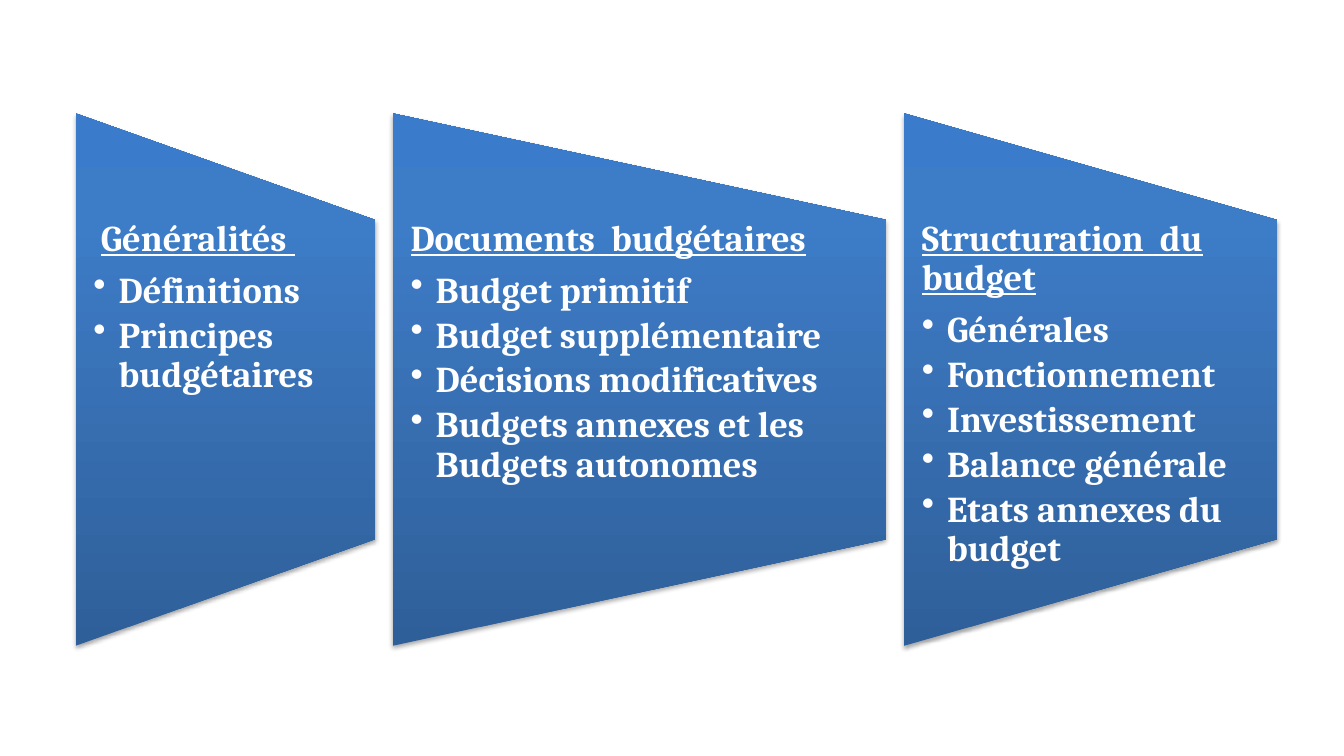
from lxml import etree
from pptx import Presentation
from pptx.dml.color import RGBColor
from pptx.enum.shapes import MSO_SHAPE
from pptx.enum.text import MSO_ANCHOR
from pptx.oxml import parse_xml
from pptx.oxml.ns import nsdecls, qn
from pptx.util import Emu, Pt

PX = 9525
TRAPEZOID = MSO_SHAPE.FLOWCHART_MANUAL_OPERATION
TOP = MSO_ANCHOR.TOP
COLORS = {"dark": "2F5F99", "mid": "3D7CC7", "light": "3A7CCB",
          "text": "FFFFFF", "shadow": "000000"}
STOPS = ((0, "dark"), (80, "mid"), (100, "light"))
LEFT, PANEL_TOP, PANEL_HEIGHT, GAP = 72, 108, 507, 17
PANELS = (
    (285, "Généralités ", 7, ("Définitions", "Principes budgétaires")),
    (470, "Documents  budgétaires", 0,
     ("Budget primitif", "Budget supplémentaire", "Décisions modificatives",
      "Budgets annexes et les Budgets autonomes")),
    (355, "Structuration  du budget", 0,
     ("Générales", "Fonctionnement", "Investissement", "Balance générale",
      "Etats annexes du budget")),
)


def px(n):
    """Convert px to EMU."""
    return Emu(round(n * PX))


def style_panel(s):
    """Give a shape the upright gradient and the soft shadow below it."""
    s.line.fill.background()
    s.shadow.inherit = False
    pr = s.element.spPr
    stops = "".join(f'<a:gs pos="{pos * 1000}"><a:srgbClr val="{COLORS[name]}"/></a:gs>'
                    for pos, name in STOPS)
    pr.find(qn("a:prstGeom")).addnext(parse_xml(
        f'<a:gradFill {nsdecls("a")} rotWithShape="0"><a:gsLst>{stops}</a:gsLst>'
        '<a:lin ang="16200000" scaled="0"/></a:gradFill>'))
    pr.find(qn("a:effectLst")).append(parse_xml(
        f'<a:outerShdw {nsdecls("a")} blurRad="40000" dist="23000" dir="5400000" '
        f'rotWithShape="0"><a:srgbClr val="{COLORS["shadow"]}">'
        '<a:alpha val="35000"/></a:srgbClr></a:outerShdw>'))


def add_text(p, text, size=26, underline=False, after=4, margin=0, bullet=False):
    """Fill a paragraph with formatted text, bulleted if asked."""
    p.line_spacing = 0.9
    p.space_after = Pt(after)
    pr = p._p.get_or_add_pPr()
    pr.set("marL", str(px(margin)))
    pr.set("indent", str(px(-margin if bullet else 0)))
    if bullet:
        p.level = 1
        etree.SubElement(pr, qn("a:buChar")).set("char", "•")
    r = p.add_run()
    r.text = text
    r.font.name = "Cambria"
    r.font.size = Pt(size)
    r.font.bold = True
    r.font.underline = underline
    r.font.color.rgb = RGBColor.from_string(COLORS["text"])


def add_panel(slide, x, y, w, h, title, title_margin, items):
    """Draw a sideways trapezoid with a heading and a bulleted list."""
    s = slide.shapes.add_shape(TRAPEZOID, px(x + (w - h) / 2),
                               px(y + (h - w) / 2), px(h), px(w))
    s.rotation = 270
    style_panel(s)
    tf = slide.shapes.add_textbox(px(x), px(y + h / 5), px(w), px(h * 3 / 5)).text_frame
    tf.word_wrap = True
    tf.vertical_anchor = TOP
    tf.margin_left = tf.margin_right = px(17)
    tf.margin_top = tf.margin_bottom = 0
    add_text(tf.paragraphs[0], title, underline=True, after=9, margin=title_margin)
    for item in items:
        add_text(tf.add_paragraph(), item, margin=24, bullet=True)


def main():
    """Build the slide and save it."""
    prs = Presentation()
    prs.slide_width, prs.slide_height = px(1280), px(720)
    slide = prs.slides.add_slide(prs.slide_layouts[6])
    x = LEFT
    for width, title, title_margin, items in PANELS:
        add_panel(slide, x, PANEL_TOP, width, PANEL_HEIGHT, title, title_margin, items)
        x += width + GAP
    prs.save("out.pptx")


if __name__ == "__main__":
    main()
